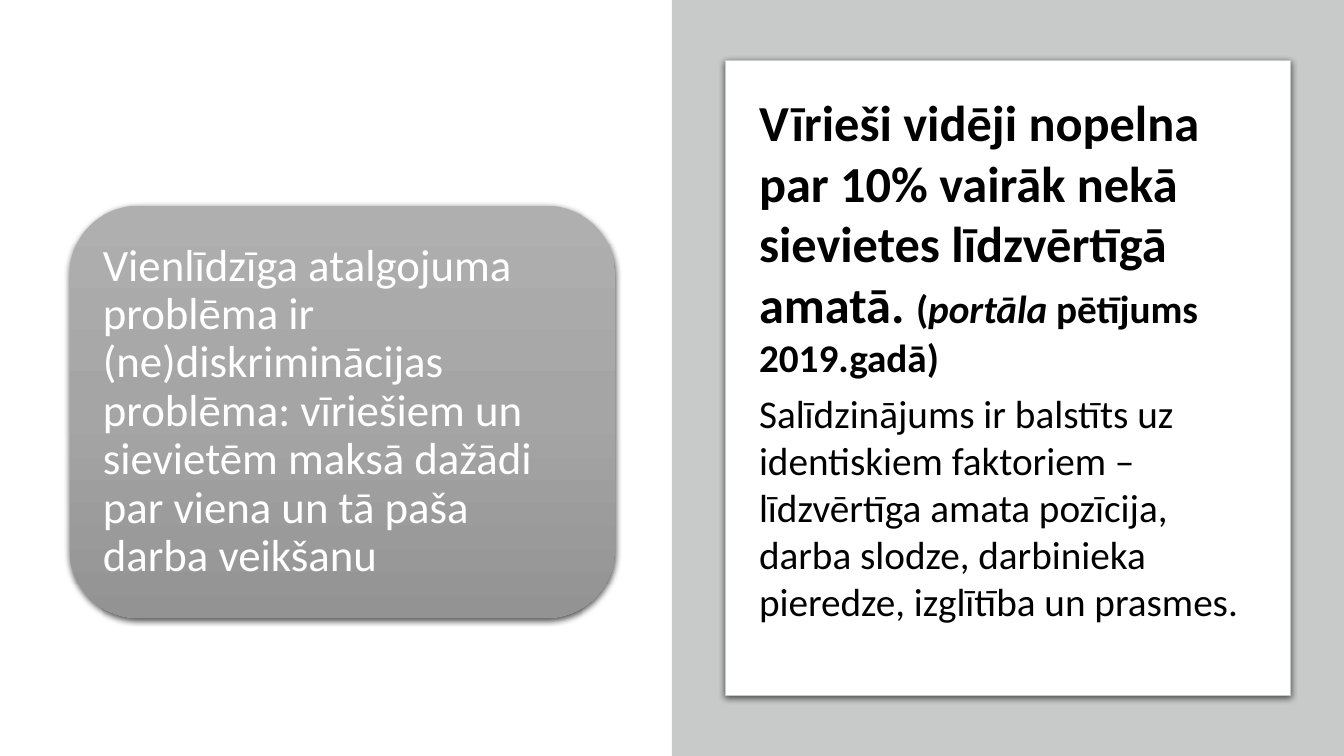
from copy import deepcopy

from lxml.etree import SubElement
from pptx import Presentation
from pptx.dml.color import RGBColor
from pptx.enum.shapes import MSO_SHAPE
from pptx.enum.text import MSO_ANCHOR, PP_ALIGN
from pptx.oxml.ns import qn
from pptx.util import Inches, Pt

WIDTH, HEIGHT = Inches(13.33), Inches(7.5)
FONT = "Calibri"
COLORS = {
    "band": "C8CACA", "paper": "FFFFFF", "ink": "000000",
    "top": "AFAFAF", "middle": "A5A5A5", "bottom": "939393",
}

PROBLEM = ("Vienlīdzīga atalgojuma problēma ir (ne)diskriminācijas problēma: "
           "vīriešiem un sievietēm maksā dažādi par viena un tā paša darba veikšanu")
# Each run: text, size, bold, italic
FINDINGS = [
    [("Vīrieši vidēji nopelna par 10% vairāk nekā sievietes līdzvērtīgā amatā. ",
      36, True, False),
     ("(", 28, True, False),
     ("portāla", 28, True, True),
     (" pētījums 2019.gadā)", 28, True, False)],
    [("Salīdzinājums ir balstīts uz identiskiem faktoriem – līdzvērtīga amata "
      "pozīcija, darba slodze, darbinieka pieredze, izglītība un prasmes.",
      28, False, False)],
]


def rgb(name):
    return RGBColor.from_string(COLORS[name])


def box(left, top, width, height):
    """Turn shares of the slide into lengths."""
    return (int(left * WIDTH), int(top * HEIGHT),
            int(width * WIDTH), int(height * HEIGHT))


def add_block(slide, kind, area, fill=None, line=None):
    sp = slide.shapes.add_shape(kind, *area)
    sp.shadow.inherit = False
    if fill:
        sp.fill.solid()
        sp.fill.fore_color.rgb = rgb(fill)
    if line:
        sp.line.color.rgb = rgb(line)
        sp.line.width = Pt(0.75)
    else:
        sp.line.fill.background()
    return sp


def add_shadow(sp):
    effects = sp.element.spPr.find(qn("a:effectLst"))
    shadow = SubElement(effects, qn("a:outerShdw"), blurRad=str(Pt(4.5)),
                        dist=str(Pt(1.5)), dir="5400000", rotWithShape="0")
    color = SubElement(shadow, qn("a:srgbClr"), val=COLORS["ink"])
    SubElement(color, qn("a:alpha"), val="63000")


def fill_gradient(sp, names):
    """Shade from top to bottom through three colours."""
    sp.fill.gradient()
    sp.fill.gradient_angle = 270
    first = sp.element.spPr.find(".//" + qn("a:gs"))
    first.addnext(deepcopy(first))
    for i, (stop, name) in enumerate(zip(sp.fill.gradient_stops, names)):
        stop.position = i / (len(names) - 1)
        stop.color.rgb = rgb(name)


def add_run(p, text, size, color, bold=False, italic=False):
    r = p.add_run()
    r.text = text
    r.font.name = FONT
    r.font.size = Pt(size)
    r.font.bold = bold
    r.font.italic = italic
    r.font.color.rgb = rgb(color)


def add_problem(slide, area):
    sp = add_block(slide, MSO_SHAPE.ROUNDED_RECTANGLE, area)
    fill_gradient(sp, ["top", "middle", "bottom"])
    add_shadow(sp)
    tf = sp.text_frame
    tf.word_wrap = True
    tf.vertical_anchor = MSO_ANCHOR.MIDDLE
    tf.margin_left = tf.margin_right = Inches(0.13)
    tf.margin_top = tf.margin_bottom = Inches(0.13)
    p = tf.paragraphs[0]
    p.alignment = PP_ALIGN.LEFT
    p.line_spacing = 0.9
    add_run(p, PROBLEM, 32, "paper")


def add_findings(slide, area):
    tf = slide.shapes.add_textbox(*area).text_frame
    tf.word_wrap = True
    for i, runs in enumerate(FINDINGS):
        p = tf.add_paragraph() if i else tf.paragraphs[0]
        p.space_after = Pt(6)
        for text, size, bold, italic in runs:
            add_run(p, text, size, "ink", bold, italic)


def main():
    prs = Presentation()
    prs.slide_width, prs.slide_height = WIDTH, HEIGHT
    slide = prs.slides.add_slide(prs.slide_layouts[6])

    # Right half with its white panel
    add_block(slide, MSO_SHAPE.RECTANGLE, box(0.5, 0, 0.5, 1), "band")
    panel = add_block(slide, MSO_SHAPE.ROUNDED_RECTANGLE,
                      box(0.54, 0.08, 0.42, 0.84), "paper", "band")
    panel.adjustments[0] = 0
    add_shadow(panel)

    # Statement on the left, findings on the panel
    add_problem(slide, (Inches(0.69), Inches(2.04), Inches(5.41), Inches(4.09)))
    add_findings(slide, (Inches(7.43), Inches(0.86), Inches(5.13), Inches(5.44)))

    prs.save("out.pptx")


if __name__ == "__main__":
    main()
